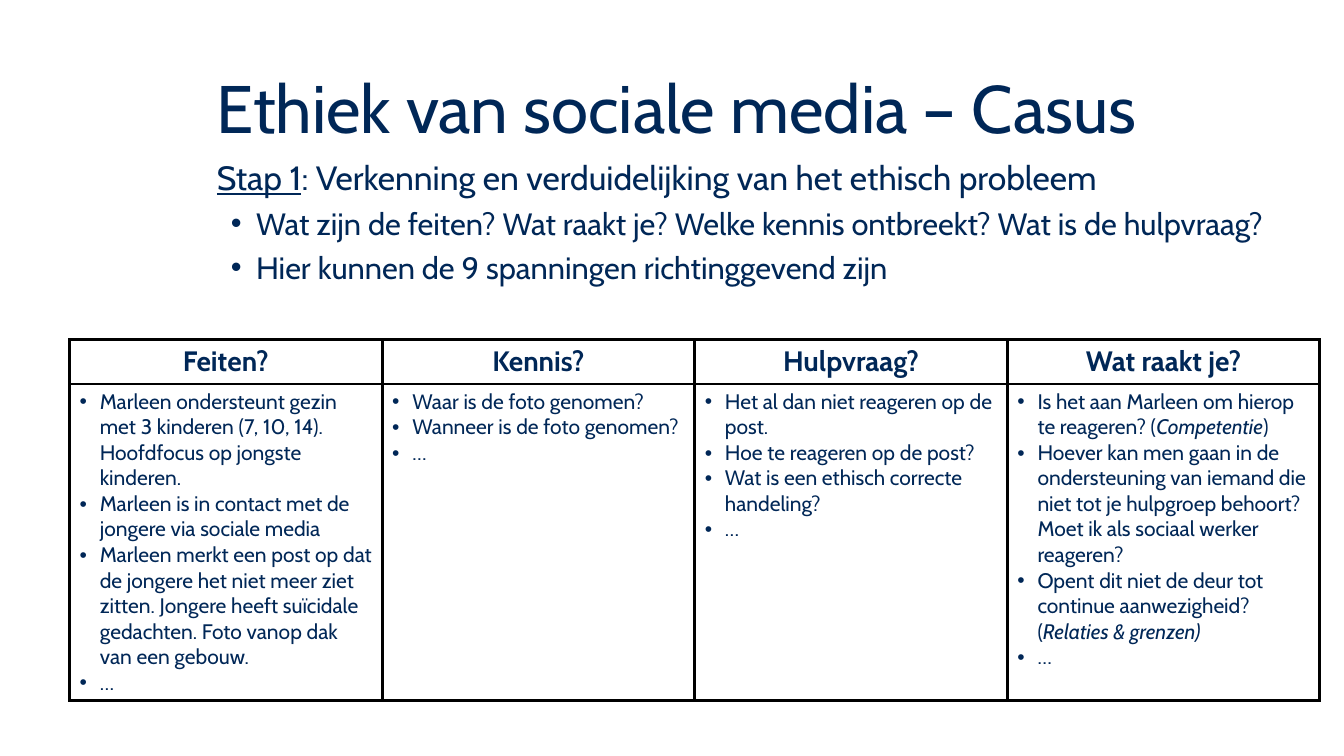
from lxml import etree
from pptx import Presentation
from pptx.dml.color import RGBColor
from pptx.enum.text import MSO_ANCHOR, MSO_AUTO_SIZE, PP_ALIGN
from pptx.oxml import parse_xml
from pptx.oxml.ns import nsdecls, qn
from pptx.util import Inches, Pt

NAVY = RGBColor(0x00, 0x27, 0x57)
FONT = "Cabin"


def style(p, size, bold=False):
    for r in p.runs:
        r.font.name = FONT
        r.font.size = Pt(size)
        r.font.bold = bold
        r.font.color.rgb = NAVY


def set_bullet(p, left, hanging, char="•"):
    pPr = p._p.get_or_add_pPr()
    pPr.set("marL", str(Inches(left)))
    pPr.set("indent", str(-Inches(hanging)))
    if char:
        etree.SubElement(pPr, qn("a:buFont")).set("typeface", "Arial")
        etree.SubElement(pPr, qn("a:buChar")).set("char", char)
    else:
        etree.SubElement(pPr, qn("a:buNone"))


prs = Presentation()
prs.slide_width, prs.slide_height = Inches(13.33), Inches(7.5)
s = prs.slides.add_slide(prs.slide_layouts[1])

# Title
title = s.shapes.title
title.left, title.top = Inches(2.05), Inches(0.69)
title.width, title.height = Inches(10.88), Inches(0.83)
tf = title.text_frame
tf.text = "Ethiek van sociale media – Casus"
tf.auto_size = MSO_AUTO_SIZE.NONE
tf.vertical_anchor = MSO_ANCHOR.MIDDLE
p = tf.paragraphs[0]
p.alignment = PP_ALIGN.LEFT
p.line_spacing = 0.9
style(p, 48)

# Step with its guiding questions
body = s.placeholders[1]
body.left, body.top = Inches(2.05), Inches(1.51)
body.width, body.height = Inches(10.88), Inches(5.19)
tf = body.text_frame
tf.auto_size = MSO_AUTO_SIZE.NONE
p = tf.paragraphs[0]
set_bullet(p, 0, 0, char=None)
for text in ("Stap 1", ": Verkenning en verduidelijking van het ethisch probleem"):
    p.add_run().text = text
p.space_before = Pt(0)
style(p, 24)
p.runs[0].font.underline = True
for text in (
    "Wat zijn de feiten? Wat raakt je? Welke kennis ontbreekt? Wat is de hulpvraag?",
    "Hier kunnen de 9 spanningen richtinggevend zijn",
):
    p = tf.add_paragraph()
    p.text = text
    p.level = 1
    set_bullet(p, 0.39, 0.25)
    p.space_before = Pt(5)
    style(p, 22)

# Case table: heading and points per column, italic words between underscores
COLUMNS = {
    "Feiten?": [
        "Marleen ondersteunt gezin met 3 kinderen (7, 10, 14). "
        "Hoofdfocus op jongste kinderen.",
        "Marleen is in contact met de jongere via sociale media",
        "Marleen merkt een post op dat de jongere het niet meer ziet zitten. "
        "Jongere heeft suïcidale gedachten. Foto vanop dak van een gebouw.",
        "…",
    ],
    "Kennis?": [
        "Waar is de foto genomen?",
        "Wanneer is de foto genomen?",
        "…",
    ],
    "Hulpvraag?": [
        "Het al dan niet reageren op de post.",
        "Hoe te reageren op de post?",
        "Wat is een ethisch correcte handeling?",
        "…",
    ],
    "Wat raakt je?": [
        "Is het aan Marleen om hierop te reageren? (_Competentie_)",
        "Hoever kan men gaan in de ondersteuning van iemand die niet tot je "
        "hulpgroep behoort? Moet ik als sociaal werker reageren?",
        "Opent dit niet de deur tot continue aanwezigheid? (_Relaties & grenzen)_",
        "…",
    ],
}
table = s.shapes.add_table(
    2, len(COLUMNS), Inches(0.69), Inches(3.37), Inches(12.4), Inches(3.57)
).table
table.first_row = table.horz_banding = False
table.rows[0].height, table.rows[1].height = Inches(0.44), Inches(3.13)
for col, (heading, points) in enumerate(COLUMNS.items()):
    table.columns[col].width = Inches(3.1)
    p = table.cell(0, col).text_frame.paragraphs[0]
    p.text = heading
    p.alignment = PP_ALIGN.CENTER
    style(p, 20, bold=True)

    tf = table.cell(1, col).text_frame
    for i, point in enumerate(points):
        p = tf.add_paragraph() if i else tf.paragraphs[0]
        set_bullet(p, 0.2, 0.2)
        for j, part in enumerate(point.split("_")):
            if part:
                r = p.add_run()
                r.text = part
                r.font.italic = j % 2 == 1
        style(p, 15)

# Black cell borders on unfilled cells
for cell in table.iter_cells():
    tcPr = cell._tc.get_or_add_tcPr()
    for side in ("lnL", "lnR", "lnT", "lnB"):
        tcPr.append(parse_xml(
            f'<a:{side} {nsdecls("a")} w="{Pt(2.25)}"><a:solidFill>'
            f'<a:srgbClr val="000000"/></a:solidFill></a:{side}>'
        ))
    cell.fill.background()

prs.save("out.pptx")
